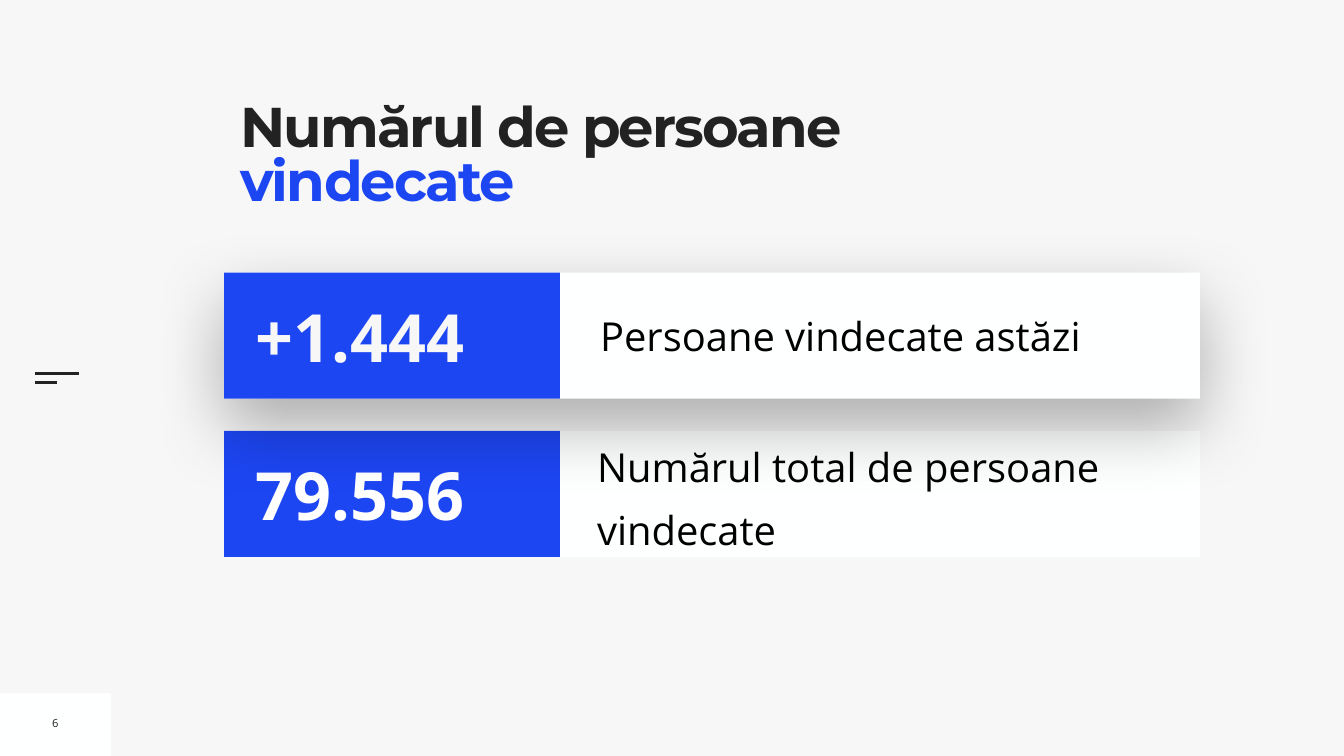
from lxml.etree import SubElement
from pptx import Presentation
from pptx.dml.color import RGBColor
from pptx.enum.shapes import MSO_CONNECTOR, MSO_SHAPE
from pptx.enum.text import MSO_ANCHOR, MSO_AUTO_SIZE, PP_ALIGN
from pptx.oxml.ns import qn
from pptx.util import Inches, Pt

BACKGROUND, WHITE, PANEL = "F7F7F7", "FFFFFF", "FEFFFF"
INK, BLACK, BLUE = "222222", "000000", "1D46F3"
HEADING, BODY = "Montserrat", "Open Sans"


def rgb(value):
    return RGBColor.from_string(value)


class SlideBuilder:
    def __init__(self, slide):
        self.s = slide
        self.target = slide.shapes
        slide.background.fill.solid()
        slide.background.fill.fore_color.rgb = rgb(BACKGROUND)

    def group(self):
        self.target = self.s.shapes.add_group_shape().shapes

    def run(self, p, text, size, color, bold=False, font=BODY, spacing=None):
        r = p.add_run()
        r.text = text
        r.font.name = font
        r.font.size = Pt(size)
        r.font.bold = bold
        r.font.color.rgb = rgb(color)
        if spacing is not None:
            r._r.get_or_add_rPr().set("spc", str(int(spacing * 100)))

    def frame(self, tf, margin, anchor, wrap=True):
        tf.auto_size = MSO_AUTO_SIZE.NONE
        tf.word_wrap = wrap
        tf.vertical_anchor = anchor
        tf.margin_left = tf.margin_right = Inches(margin)
        tf.margin_top = tf.margin_bottom = Inches(margin)

    def title(self, box, parts):
        sp = self.s.shapes.title
        sp.left, sp.top, sp.width, sp.height = map(Inches, box)
        sp.fill.solid()
        sp.fill.fore_color.rgb = rgb(BACKGROUND)
        self.frame(sp.text_frame, 0, MSO_ANCHOR.TOP)
        p = sp.text_frame.paragraphs[0]
        p.alignment = PP_ALIGN.LEFT
        p.line_spacing = 0.8
        for text, color in parts:
            self.run(p, text, 80, color, True, HEADING, -2.7)

    def rect(self, box, color, shadow=False):
        sp = self.target.add_shape(MSO_SHAPE.RECTANGLE, *map(Inches, box))
        sp.fill.solid()
        sp.fill.fore_color.rgb = rgb(color)
        sp.line.fill.background()
        sp.shadow.inherit = False
        if shadow:
            self.drop_shadow(sp)

    def drop_shadow(self, sp):
        effects = sp._element.spPr.find(qn("a:effectLst"))
        outer = SubElement(effects, qn("a:outerShdw"), blurRad=str(Pt(100)),
                           dist=str(Pt(40)), dir="5400000", rotWithShape="0")
        color = SubElement(outer, qn("a:srgbClr"), val=BLACK)
        SubElement(color, qn("a:alpha"), val="30000")

    def line(self, x1, x2, y):
        cx = self.target.add_connector(MSO_CONNECTOR.STRAIGHT, Inches(x1), Inches(y),
                                       Inches(x2), Inches(y))
        cx.line.color.rgb = rgb(INK)
        cx.line.width = Pt(3)
        SubElement(cx._element.spPr, qn("a:effectLst"))

    def text(self, box, text, size, color, bold=False, margin=0.1, wrap=True,
             align=PP_ALIGN.LEFT, line_spacing=None, space_before=None):
        tb = self.target.add_textbox(*map(Inches, box))
        self.frame(tb.text_frame, margin, MSO_ANCHOR.MIDDLE, wrap)
        p = tb.text_frame.paragraphs[0]
        p.alignment = align
        if line_spacing:
            p.line_spacing = line_spacing
        if space_before:
            p.space_before = Pt(space_before)
        self.run(p, text, size, color, bold)

    def statistic(self, top, value, value_color, label, label_box, shadow=False, **label_style):
        self.group()
        self.rect((4.45, top, 19.36, 2.5), PANEL, shadow)
        self.text(label_box, label, 57, BLACK, **label_style)
        self.rect((4.45, top, 6.66, 2.5), BLUE)
        self.text((4.98, top + 0.35, 6.03, 1.8), value, 95, value_color, True)


def main():
    prs = Presentation()
    prs.slide_width, prs.slide_height = Inches(26.67), Inches(15)
    s = SlideBuilder(prs.slides.add_slide(prs.slide_layouts[5]))

    s.rect((0, 13.76, 2.2, 1.24), PANEL)
    s.line(0.69, 1.57, 7.41)
    s.line(0.69, 1.13, 7.59)
    s.title((4.77, 2.07, 13.01, 2.73),
            [("Numărul de persoane ", INK), ("vindecate", BLUE)])
    s.text((0.93, 14.09, 0.34, 0.51), "6", 16, INK, wrap=False, align=PP_ALIGN.CENTER)

    s.statistic(8.55, "79.556", WHITE, "Numărul total de persoane vindecate",
                (11.85, 8.56, 11.95, 2.36), margin=0, line_spacing=1.3, space_before=20)
    s.statistic(5.41, "+1.444", BACKGROUND, "Persoane vindecate astăzi",
                (11.81, 6.07, 11.76, 1.16), shadow=True)

    prs.save("out.pptx")


if __name__ == "__main__":
    main()
